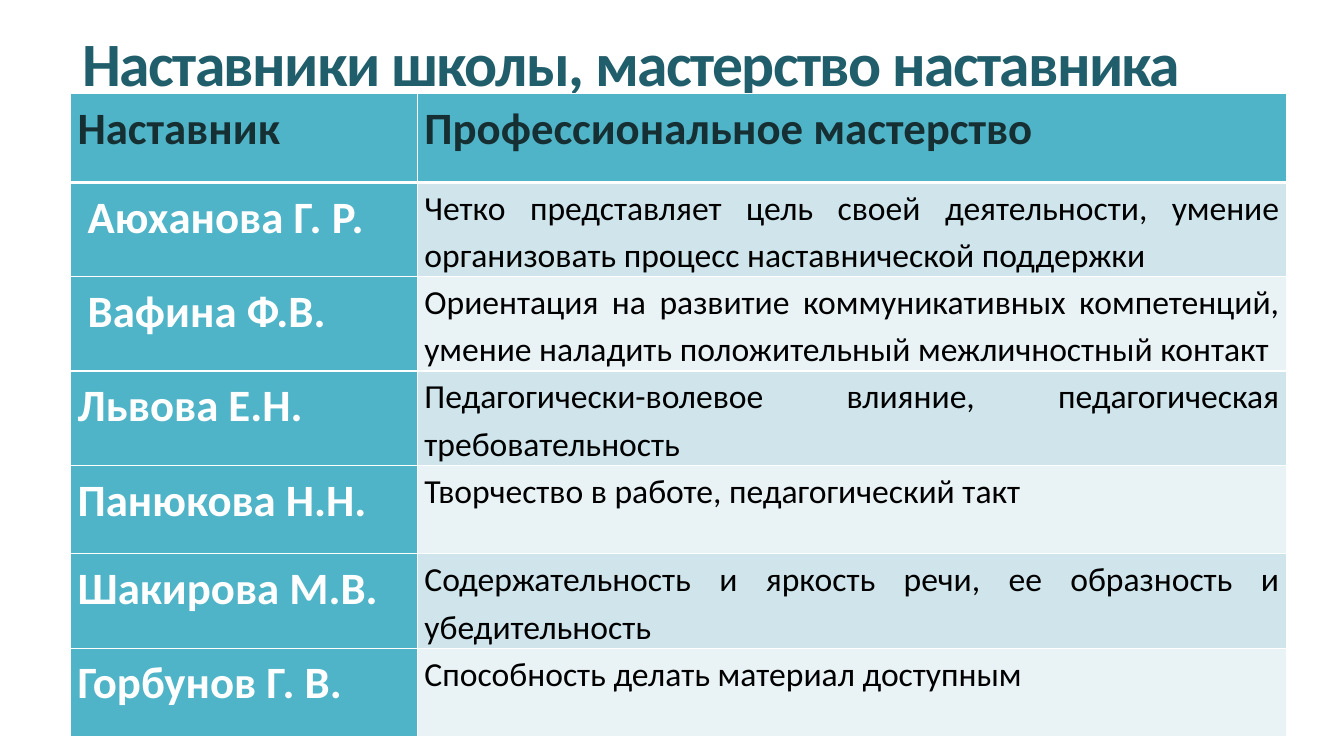
import pptx
import pptx.util
import pptx.dml.color
import pptx.enum.text
import pptx.oxml
import pptx.oxml.ns
from dataclasses import dataclass

PX = 9144  # EMU in one px, 100 px to the inch
ALIGN = pptx.enum.text.PP_ALIGN
ANCHOR = pptx.enum.text.MSO_ANCHOR


@dataclass(frozen=True)
class Theme:
    font: str = "Calibri"
    title: str = "215E6B"
    head: str = "162F33"
    name: str = "FFFFFF"
    body: str = "000000"
    line: str = "FFFFFF"
    fill: str = "50B4C8"
    bands: tuple = ("D0E5EB", "E9F2F5")
    big: int = 44
    mid: int = 32
    small: int = 24


THEME = Theme()
HEADS = ("Наставник", "Профессиональное мастерство")
MENTORS = (
    (" Аюханова Г. Р.", "Четко представляет цель своей деятельности, умение "
     "организовать процесс наставнической поддержки "),
    (" Вафина Ф.В.", "Ориентация на развитие коммуникативных компетенций, "
     "умение наладить положительный межличностный контакт"),
    ("Львова Е.Н.", "Педагогически-волевое влияние, педагогическая требовательность"),
    ("Панюкова Н.Н.", "Творчество в работе, педагогический такт"),
    ("Шакирова М.В.", "Содержательность и яркость речи, ее образность и убедительность"),
    ("Горбунов Г. В.", "Способность делать материал доступным"),
)


def px(n):
    return pptx.util.Emu(n * PX)


def rgb(code):
    return pptx.dml.color.RGBColor.from_string(code)


def write(frame, text, size, color, bold=True, align=ALIGN.LEFT, lead=None, track=None):
    para = frame.paragraphs[0]
    para.alignment = align
    if lead:
        para.line_spacing = lead
    run = para.add_run()
    run.text = text
    font = run.font
    font.name, font.size, font.bold = THEME.font, pptx.util.Pt(size), bold
    font.color.rgb = rgb(color)
    if track:
        run._r.get_or_add_rPr().set("spc", str(track))


def edge(cell, side, width):
    space = pptx.oxml.ns.nsdecls("a")
    line = pptx.oxml.parse_xml(
        f'<a:ln{side} {space} w="{pptx.util.Pt(width)}"><a:solidFill>'
        f'<a:srgbClr val="{THEME.line}"/></a:solidFill></a:ln{side}>')
    cell._tc.get_or_add_tcPr().append(line)


def heading(slide, box, text):
    shape = slide.shapes.title
    shape.left, shape.top, shape.width, shape.height = map(px, box)
    frame = shape.text_frame
    frame.word_wrap = True
    frame.auto_size = pptx.enum.text.MSO_AUTO_SIZE.NONE
    frame.vertical_anchor = ANCHOR.MIDDLE
    write(frame, text, THEME.big, THEME.title, track=-120)


def grid(slide, box, split):
    left, top, width, height = box
    rows = (HEADS,) + MENTORS
    table = slide.shapes.add_table(len(rows), 2, *map(px, box)).table
    for col, wide in zip(table.columns, (split, width - split)):
        col.width = px(wide)
    for r, row in enumerate(rows):
        table.rows[r].height = px(height // len(rows))
        for c, text in enumerate(row):
            cell = table.cell(r, c)
            cell.margin_left = cell.margin_right = px(7)
            cell.margin_top = cell.margin_bottom = 0
            # Borders: a thick rule under the header row
            edge(cell, "L", 1)
            edge(cell, "R", 1)
            edge(cell, "T", 3 if r == 1 else 1)
            edge(cell, "B", 3 if r == 0 else 1)
            # Header row and name column are dark, the rest is banded
            plain = r > 0 and c > 0
            cell.fill.solid()
            cell.fill.fore_color.rgb = rgb(THEME.bands[(r - 1) % 2] if plain else THEME.fill)
            color = THEME.head if r == 0 else THEME.body if plain else THEME.name
            write(cell.text_frame, text, THEME.small if plain else THEME.mid, color,
                  bold=not plain, align=ALIGN.JUSTIFY, lead=1.15)


def main():
    deck = pptx.Presentation()
    deck.slide_width, deck.slide_height = px(1333), px(750)
    slide = deck.slides.add_slide(deck.slide_layouts[5])
    heading(slide, (72, 0, 1178, 122), "Наставники школы, мастерство наставника")
    grid(slide, (70, 93, 1206, 616), 344)
    deck.save("out.pptx")


if __name__ == "__main__":
    main()
